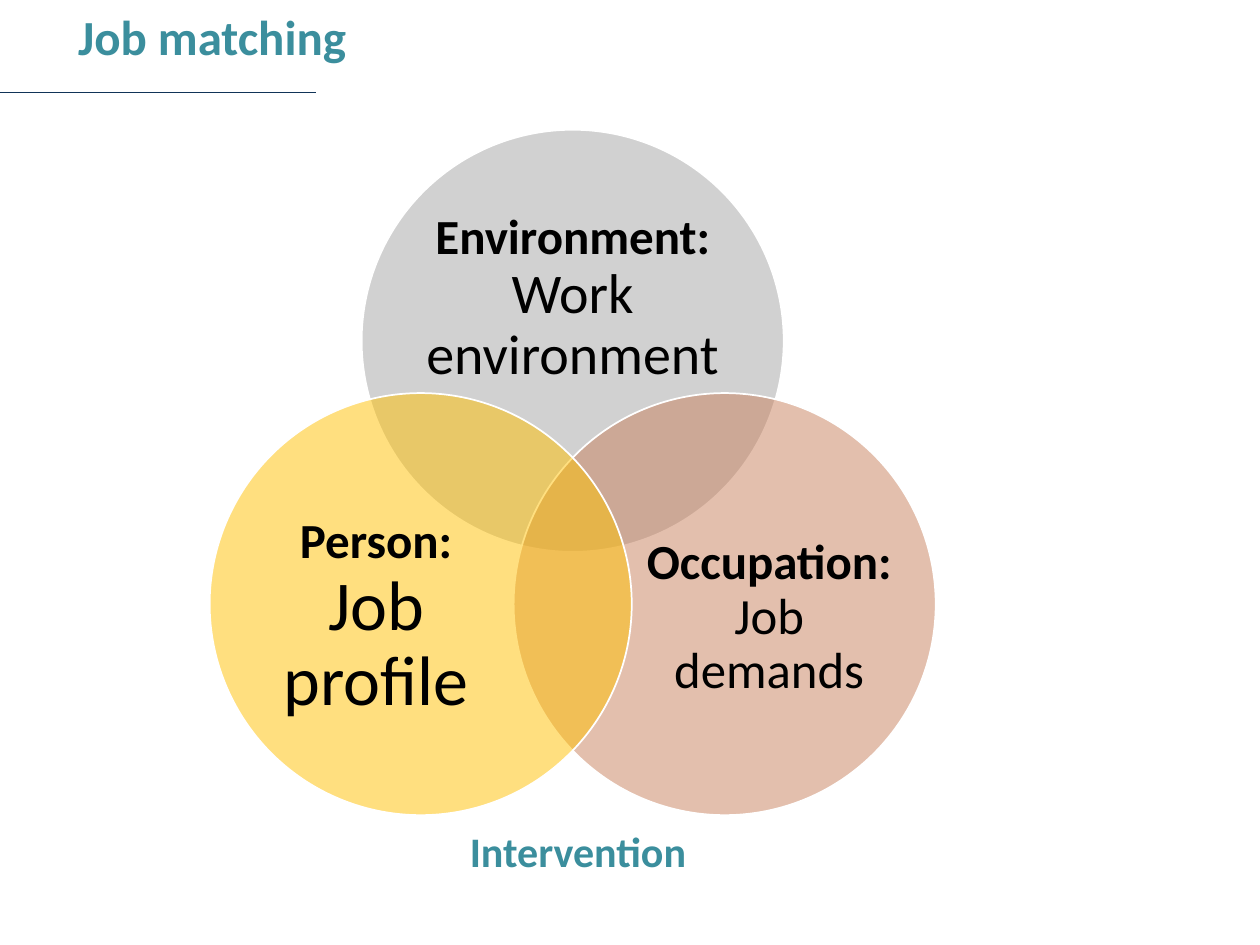
import math

from lxml import etree
from pptx import Presentation, util as u
from pptx.dml.color import RGBColor
from pptx.enum import shapes as sh, text as tx
from pptx.oxml.ns import qn


def tint(code):
    return RGBColor.from_string(code)


class Deck:
    """Style and current slide, measured on a grid of 100 columns by 75 rows."""
    font, teal, ink, rule = "Calibri", "3B8E9D", "000000", "113458"

    def __init__(self):
        self.prs = Presentation()
        self.prs.slide_width, self.prs.slide_height = u.Inches(10), u.Inches(7.5)
        self.cell = self.prs.slide_width / 100
        self.slide = self.prs.slides.add_slide(self.prs.slide_layouts[5])

    def grid(self, *cells):
        return [round(n * self.cell) for n in cells]

    def fill(self, para, parts, hue, align=tx.PP_ALIGN.LEFT):
        para.alignment = align
        for words, size, bold in parts:
            run = para.add_run()
            run.text = words
            font = run.font
            font.name, font.size, font.bold = self.font, u.Pt(size), bold
            font.color.rgb = tint(hue)

    def title(self, words, box):
        head = self.slide.shapes.title
        head.left, head.top, head.width, head.height = self.grid(*box)
        frame = head.text_frame
        frame.word_wrap = False
        frame.auto_size = tx.MSO_AUTO_SIZE.SHAPE_TO_FIT_TEXT
        frame.vertical_anchor = tx.MSO_ANCHOR.TOP
        self.fill(frame.paragraphs[0], [(words, 28, True)], self.teal)

    def line(self, *ends):
        bar = self.slide.shapes.add_connector(sh.MSO_CONNECTOR.STRAIGHT, *self.grid(*ends))
        bar.line.color.rgb, bar.line.width = tint(self.rule), u.Pt(0.5)
        etree.SubElement(bar._element.spPr, qn("a:effectLst"))

    def disc(self, mid, wide, hue):
        x, y = mid
        box = self.grid(x - wide / 2, y - wide / 2, wide, wide)
        disc = self.slide.shapes.add_shape(sh.MSO_SHAPE.OVAL, *box)
        disc.shadow.inherit = False
        disc.fill.solid()
        disc.fill.fore_color.rgb = tint(hue)
        shade = disc._element.spPr.find(qn("a:solidFill"))[0]
        etree.SubElement(shade, qn("a:alpha"), val="50000")
        disc.line.color.rgb, disc.line.width = tint("FFFFFF"), u.Pt(1)

    def frame(self, box):
        frame = self.slide.shapes.add_textbox(*self.grid(*box)).text_frame
        frame.word_wrap = True
        return frame

    def label(self, box, head, words, size):
        frame = self.frame(box)
        frame.margin_left = frame.margin_right = frame.margin_top = frame.margin_bottom = 0
        frame.vertical_anchor = tx.MSO_ANCHOR.MIDDLE
        para = frame.paragraphs[0]
        para.line_spacing = 0.9
        parts = [(head + ": ", 28, True), (words, size, False)]
        self.fill(para, parts, self.ink, tx.PP_ALIGN.CENTER)

    def note(self, box, words):
        frame = self.frame(box)
        frame.auto_size = tx.MSO_AUTO_SIZE.SHAPE_TO_FIT_TEXT
        self.fill(frame.paragraphs[0], [(words, 24, True)], self.teal)


def main():
    deck = Deck()
    deck.line(-13, 7.3, 25.1, 7.3)
    deck.title("Job matching", (5.2, 0, 24.4, 5.7))
    rings = [
        ("A5A5A5", (33.2, 16.2, 24.5, 15.1), "Environment", "Work environment", 32),
        ("C9815D", (51, 39.9, 20.1, 18.4), "Occupation", "Job demands", 29),
        ("FFC000", (19.8, 39.9, 20.1, 18.4), "Person", "Job profile", 40),
    ]
    for i, (hue, box, head, words, size) in enumerate(rings):
        turn = math.radians(120 * i - 90)
        mid = 45.45 + 13.93 * math.cos(turn), 40.98 + 13.93 * math.sin(turn)
        deck.disc(mid, 33.5, hue)
        deck.label(box, head, words, size)
    deck.note((36.3, 65, 30.8, 5), "Intervention")
    deck.prs.save("out.pptx")


if __name__ == "__main__":
    main()
